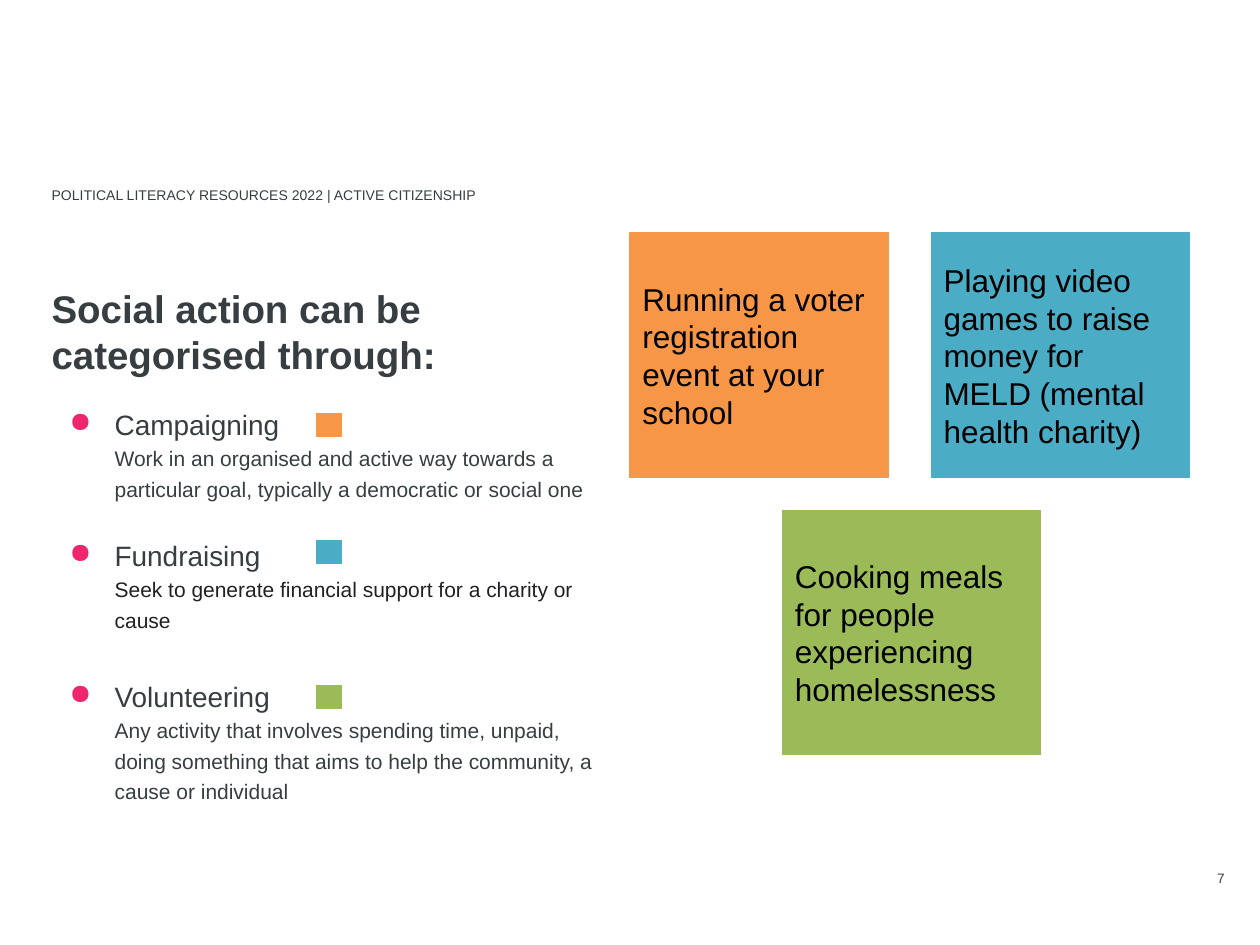
from lxml import etree
from pptx import Presentation
from pptx.dml.color import RGBColor
from pptx.enum.shapes import MSO_SHAPE
from pptx.enum.text import MSO_ANCHOR, PP_ALIGN
from pptx.oxml.ns import qn
from pptx.util import Inches, Pt

RECTANGLE = MSO_SHAPE.RECTANGLE
TOP, MIDDLE = MSO_ANCHOR.TOP, MSO_ANCHOR.MIDDLE
LEFT, RIGHT = PP_ALIGN.LEFT, PP_ALIGN.RIGHT

COLORS = {
    "slate": "363E42",
    "ink": "202124",
    "black": "000000",
    "pink": "EE266D",
    "orange": "F79646",
    "blue": "4BACC6",
    "green": "9BBB59",
}
FONT = "Arial"
MARGIN = 0.41
COLUMN_WIDTH = 4.38
CARD_WIDTH, CARD_HEIGHT = 2.05, 1.94
KEY_LEFT, KEY_WIDTH, KEY_HEIGHT = 2.51, 0.2, 0.18

CATEGORIES = [
    ("Campaigning", "Work in an organised and active way towards a particular goal, "
     "typically a democratic or social one", "slate", 0, "orange", 3.28),
    ("Fundraising", "Seek to generate financial support for a charity or cause",
     "ink", 17.3, "blue", 4.29),
    ("Volunteering", "Any activity that involves spending time, unpaid, doing something "
     "that aims to help the community, a cause or individual", "slate", 23, "green", 5.44),
]
CARDS = [
    ("Playing video games to raise money for MELD (mental health charity)", "blue", 7.39, 1.85),
    ("Running a voter registration event at your school", "orange", 5, 1.85),
    ("Cooking meals for people experiencing homelessness", "green", 6.21, 4.05),
]


def color(name):
    return RGBColor.from_string(COLORS[name])


def set_frame(frame, inset=0, anchor=TOP):
    frame.word_wrap = True
    frame.vertical_anchor = anchor
    frame.margin_left = frame.margin_right = Inches(inset)
    frame.margin_top = frame.margin_bottom = Inches(inset)


def style(para, size, color_name, bold=False, align=LEFT):
    para.alignment = align
    para.font.name = FONT
    para.font.size = Pt(size)
    para.font.bold = bold
    para.font.color.rgb = color(color_name)


def add_box(page, left, top, width, height):
    box = page.shapes.add_textbox(Inches(left), Inches(top), Inches(width), Inches(height))
    set_frame(box.text_frame)
    return box.text_frame


def add_label(page, text, place, size, bold=False, align=LEFT):
    frame = add_box(page, *place)
    frame.text = text
    style(frame.paragraphs[0], size, "slate", bold, align)
    return frame


def add_block(page, fill, left, top, width, height):
    block = page.shapes.add_shape(
        RECTANGLE, Inches(left), Inches(top), Inches(width), Inches(height))
    block.shadow.inherit = False
    block.fill.solid()
    block.fill.fore_color.rgb = color(fill)
    block.line.color.rgb = color(fill)
    block.line.width = Pt(0.75)
    return block


def add_card(page, text, fill, left, top):
    frame = add_block(page, fill, left, top, CARD_WIDTH, CARD_HEIGHT).text_frame
    set_frame(frame, 0.1, MIDDLE)
    frame.text = text
    style(frame.paragraphs[0], 18, "black")


def indent(para, bullet):
    properties = para._p.get_or_add_pPr()
    properties.set("marL", str(Inches(0.5)))
    properties.set("indent", str(Inches(-0.36) if bullet else 0))
    if bullet:
        bullet_color = etree.SubElement(properties, qn("a:buClr"))
        etree.SubElement(bullet_color, qn("a:srgbClr"), val=COLORS["pink"])
        etree.SubElement(properties, qn("a:buChar"), char="●")
    else:
        etree.SubElement(properties, qn("a:buNone"))


def add_list_line(frame, text, size, color_name, bullet=False, gap=0):
    para = frame.add_paragraph() if frame.text else frame.paragraphs[0]
    para.text = text
    indent(para, bullet)
    para.line_spacing = 1.2
    if gap:
        para.space_before = Pt(gap)
    style(para, size, color_name)


def add_categories(page):
    frame = add_box(page, MARGIN, 3.18, COLUMN_WIDTH, 3.25)
    for name, meaning, meaning_color, gap, key, key_top in CATEGORIES:
        add_list_line(frame, name, 16, "slate", True, gap)
        add_list_line(frame, meaning, 12, meaning_color)
        add_block(page, key, KEY_LEFT, key_top, KEY_WIDTH, KEY_HEIGHT)


def main():
    deck = Presentation()
    deck.slide_width, deck.slide_height = Inches(10), Inches(7.5)
    page = deck.slides.add_slide(deck.slide_layouts[6])
    add_label(page, "POLITICAL LITERACY RESOURCES 2022 | ACTIVE CITIZENSHIP",
              (MARGIN, 1.48, 7, 0.2), 8)
    add_label(page, "Social action can be categorised through:",
              (MARGIN, 2.26, COLUMN_WIDTH, 0.91), 22, bold=True)
    add_categories(page)
    for card in CARDS:
        add_card(page, *card)
    number = add_label(page, "7", (8.53, 6.91, 1.19, 0.14), 7.8, align=RIGHT)
    number.vertical_anchor = MIDDLE
    number.paragraphs[0].line_spacing = 0.8
    deck.save("out.pptx")


if __name__ == "__main__":
    main()
